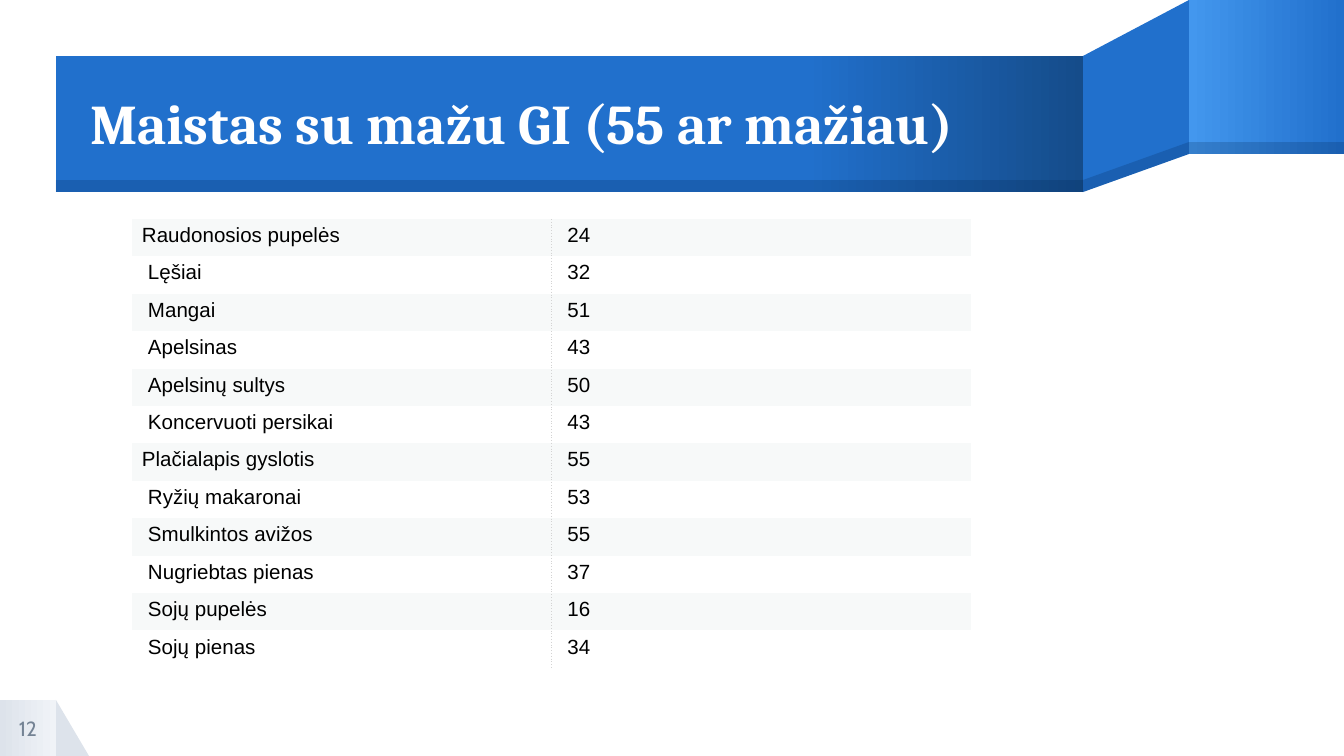
from lxml import etree
from pptx import Presentation
from pptx.dml.color import RGBColor
from pptx.enum import dml, shapes, text
from pptx.oxml.ns import qn
from pptx.util import Pt

EMU_PER_PX = 9144000 / 1344
COLORS = {
    "blue": "2170CC", "light_blue": "4397EE", "dark_blue": "154C8A",
    "shade": "001F46", "fold": "DDE3EB", "tab": "F0F3F7",
    "number": "748394", "white": "FFFFFF", "black": "000000",
    "band": "F7F9F9", "divider": "D3D3D3",
}
TITLE = {"size": Pt(30), "name": "Cambria", "bold": True}
NUMBER = {"size": Pt(11), "name": "Cabin"}
BODY = {"size": Pt(11), "name": "Arial"}
INDENT = 6
FOODS = [
    ("Raudonosios pupelės", 24, 0),
    ("Lęšiai", 32, INDENT),
    ("Mangai", 51, INDENT),
    ("Apelsinas", 43, INDENT),
    ("Apelsinų sultys", 50, INDENT),
    ("Koncervuoti persikai", 43, INDENT),
    ("Plačialapis gyslotis", 55, 0),
    ("Ryžių makaronai", 53, INDENT),
    ("Smulkintos avižos", 55, INDENT),
    ("Nugriebtas pienas", 37, INDENT),
    ("Sojų pupelės", 16, INDENT),
    ("Sojų pienas", 34, INDENT),
]


def px(n):
    """Turn pixels into EMU."""
    return round(n * EMU_PER_PX)


def rgb(name):
    """Look up a colour by name."""
    return RGBColor.from_string(COLORS[name])


def paint(sp, color, alpha=None):
    """Give a shape a plain fill without line or shadow."""
    sp.shadow.inherit = False
    sp.line.fill.background()
    sp.fill.solid()
    sp.fill.fore_color.rgb = rgb(color)
    if alpha is not None:
        clr = sp.fill._xPr.find(qn("a:solidFill"))[0]
        etree.SubElement(clr, qn("a:alpha"), val=str(alpha * 1000))


def add_block(s, box, color, kind=shapes.MSO_SHAPE.RECTANGLE, alpha=None, end=None, start=0):
    """Add a preset shape, blended towards an end colour if one is given."""
    sp = s.shapes.add_shape(kind, *map(px, box))
    paint(sp, color, alpha)
    if end:
        sp.fill.gradient()
        sp.fill.gradient_angle = 0
        for stop, name, pos in zip(sp.fill.gradient_stops, (color, end), (start, 1)):
            stop.color.rgb = rgb(name)
            stop.position = pos


def add_panel(s, points, color, alpha=None):
    """Add a closed outline through the given points."""
    first, *rest = [(px(x), px(y)) for x, y in points]
    builder = s.shapes.build_freeform(*first, scale=1.0)
    builder.add_line_segments(rest, close=True)
    paint(builder.convert_to_shape(), color, alpha)


def write(tf, words, color, style):
    """Write one styled run and return its paragraph."""
    p = tf.paragraphs[0]
    r = p.add_run()
    r.text = words
    for key, value in style.items():
        setattr(r.font, key, value)
    r.font.color.rgb = rgb(color)
    return p


def add_text(s, box, words, color, style):
    """Add a text box without insets, centred vertically."""
    tf = s.shapes.add_textbox(*map(px, box)).text_frame
    settings = {"word_wrap": True, "vertical_anchor": text.MSO_ANCHOR.MIDDLE}
    settings.update({f"margin_{side}": 0 for side in ("left", "top", "right", "bottom")})
    for key, value in settings.items():
        setattr(tf, key, value)
    return write(tf, words, color, style)


def add_ribbon(s, x, y, w, h, title):
    """Draw the folded title ribbon in its box."""
    front, back, drop, edge = 1027, 1133, 56, 12
    right, low, high = w - back, y + h, y + h - 38
    add_panel(s, [(x + back, y), (x + front, y + drop), (x + front, low), (x + back, high)], "blue")
    add_block(s, (x + back, y, right, high - y), "light_blue", end="blue")
    add_block(s, (x, y + drop, front, h - drop), "blue", end="dark_blue", start=0.73)
    add_panel(s, [(x + back, high - edge), (x + front, low - edge),
                  (x + front, low), (x + back, high)], "shade", 20)
    add_block(s, (x + back, high - edge, right, edge), "shade", alpha=20)
    add_block(s, (x, low - edge, front, edge), "shade", alpha=20)
    p = add_text(s, (x + 34, y + drop + 2, front - 34, h - drop), title, "white", TITLE)
    p.line_spacing = 0.9


def add_number(s, x, y, w, h, number):
    """Draw the page number tab with its fold."""
    add_block(s, (x + w, y, 33, h), "fold", shapes.MSO_SHAPE.RIGHT_TRIANGLE)
    add_block(s, (x, y, w, h), "fold", end="tab")
    p = add_text(s, (x, y, w, h), number, "number", NUMBER)
    p.alignment = text.PP_ALIGN.CENTER


def add_borders(cell, dotted):
    """Leave a cell with a dotted line on one side only."""
    tc_pr = cell._tc.get_or_add_tcPr()
    for side in ("lnL", "lnR", "lnT", "lnB"):
        ln = etree.SubElement(tc_pr, qn(f"a:{side}"), w=str(Pt(0.5)))
        if side == dotted:
            fill = etree.SubElement(ln, qn("a:solidFill"))
            etree.SubElement(fill, qn("a:srgbClr"), val=COLORS["divider"])
            etree.SubElement(ln, qn("a:prstDash"), val=dml.MSO_LINE.ROUND_DOT.name and "dot")
        else:
            etree.SubElement(ln, qn("a:noFill"))


def add_foods(s, x, y, w, h, foods):
    """Tabulate the foods with their index in equal rows."""
    frame = s.shapes.add_table(len(foods), 2, *map(px, (x, y, w, h)))
    table = frame.table
    table.first_row = table.horz_banding = False
    for i, (food, index, indent) in enumerate(foods):
        table.rows[i].height = px(h / len(foods))
        columns = ((food, indent, "lnR"), (str(index), INDENT, "lnL"))
        for j, (words, shift, dotted) in enumerate(columns):
            cell = table.cell(i, j)
            add_borders(cell, dotted)
            cell.fill.solid()
            cell.fill.fore_color.rgb = rgb("white" if i % 2 else "band")
            margins = {"left": 10 + shift, "top": 5, "right": 10, "bottom": 5}
            for side, value in margins.items():
                setattr(cell, f"margin_{side}", px(value))
            write(cell.text_frame, words, "black", BODY)


def main():
    """Build the slide and save it."""
    prs = Presentation()
    prs.slide_width, prs.slide_height = px(1344), px(756)
    s = prs.slides.add_slide(prs.slide_layouts[6])
    add_number(s, 0, 700, 56, 56, "12")
    add_ribbon(s, 56, 0, 1288, 192, "Maistas su mažu GI (55 ar mažiau)")
    add_foods(s, 132, 219, 839, 449, FOODS)
    prs.save("out.pptx")


if __name__ == "__main__":
    main()
